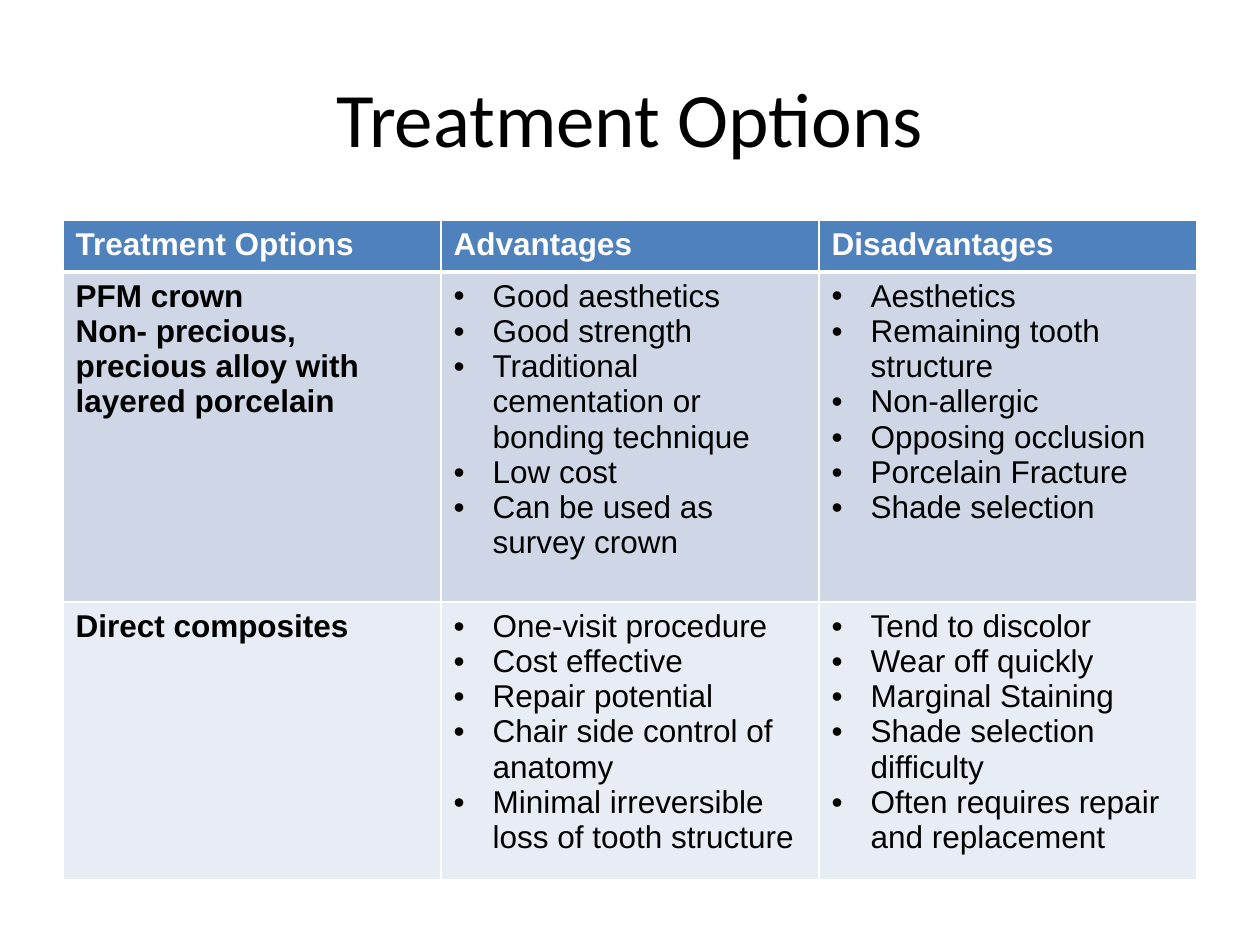
import pptx
import pptx.util
import pptx.dml.color
import pptx.enum.text
from lxml import etree
from pptx.oxml.ns import qn
from pptx.util import Inches, Pt

TITLE = "Treatment Options"
HEADS = ["Treatment Options", "Advantages", "Disadvantages"]
OPTIONS = [
    (
        ["PFM crown", "Non- precious, precious alloy with layered porcelain"],
        ["Good aesthetics", "Good strength",
         "Traditional cementation or bonding technique",
         "Low cost", "Can be used as survey crown"],
        ["Aesthetics", "Remaining tooth structure", "Non-allergic",
         "Opposing occlusion", "Porcelain Fracture", "Shade selection"],
    ),
    (
        ["Direct composites"],
        ["One-visit procedure", "Cost effective", "Repair potential",
         "Chair side control of anatomy",
         "Minimal irreversible loss of tooth structure"],
        ["Tend to discolor", "Wear off quickly", "Marginal Staining",
         "Shade selection difficulty",
         "Often requires repair and replacement"],
    ),
]
COLORS = {"head": "4F81BD", "odd": "CFD7E7", "even": "E8ECF4",
          "text": "000000", "white": "FFFFFF"}
HEIGHTS = [0.41, 2.62, 2.06]
INDENT = Inches(0.31)


def rgb(name):
    return pptx.dml.color.RGBColor.from_string(COLORS[name])


def style(para, face, size, color, bold=False):
    font = para.font
    font.name, font.size, font.bold = face, Pt(size), bold
    font.color.rgb = rgb(color)


def bullet(para):
    props = para._p.get_or_add_pPr()
    props.set("marL", str(INDENT))
    props.set("indent", str(-INDENT))
    font = etree.Element(qn("a:buFont"), typeface="Arial")
    mark = etree.Element(qn("a:buChar"), char="•")
    props.insert(0, font)
    props.insert(1, mark)


def border(cell, head):
    """Draw white cell edges, with a thick one below the header."""
    props = cell._tc.get_or_add_tcPr()
    for spot, side in enumerate(["L", "R", "T", "B"]):
        width = 3 if head and side == "B" else 1
        line = etree.Element(qn("a:ln" + side), w=str(Pt(width)))
        fill = etree.SubElement(line, qn("a:solidFill"))
        etree.SubElement(fill, qn("a:srgbClr"), val=COLORS["white"])
        props.insert(spot, line)


def fill_cell(cell, lines, back, color, bold, dots):
    cell.fill.solid()
    cell.fill.fore_color.rgb = rgb(back)
    border(cell, back == "head")
    frame = cell.text_frame
    frame.text = "\n".join(lines)
    for para in frame.paragraphs:
        style(para, "Arial", 18, color, bold)
        if dots:
            bullet(para)


def add_title(slide):
    box = slide.shapes.add_textbox(Inches(0.5), Inches(0.3),
                                   Inches(9), Inches(1.25))
    frame = box.text_frame
    frame.word_wrap = True
    frame.vertical_anchor = pptx.enum.text.MSO_ANCHOR.MIDDLE
    frame.text = TITLE
    para = frame.paragraphs[0]
    para.alignment = pptx.enum.text.PP_ALIGN.CENTER
    style(para, "Calibri", 44, "text")


def add_options(slide):
    table = slide.shapes.add_table(
        len(OPTIONS) + 1, len(HEADS), Inches(0.5), Inches(1.75),
        Inches(9), Inches(sum(HEIGHTS))).table
    for row, height in zip(table.rows, HEIGHTS):
        row.height = Inches(height)
    for col, head in enumerate(HEADS):
        fill_cell(table.cell(0, col), [head], "head", "white", True, False)
    for row, option in enumerate(OPTIONS, 1):
        back = "odd" if row % 2 else "even"
        for col, lines in enumerate(option):
            fill_cell(table.cell(row, col), lines, back, "text",
                      col == 0, col > 0)


def main():
    deck = pptx.Presentation()
    deck.slide_width, deck.slide_height = Inches(10), Inches(7.5)
    slide = deck.slides.add_slide(deck.slide_layouts[6])
    add_title(slide)
    add_options(slide)
    deck.save("out.pptx")


if __name__ == "__main__":
    main()
